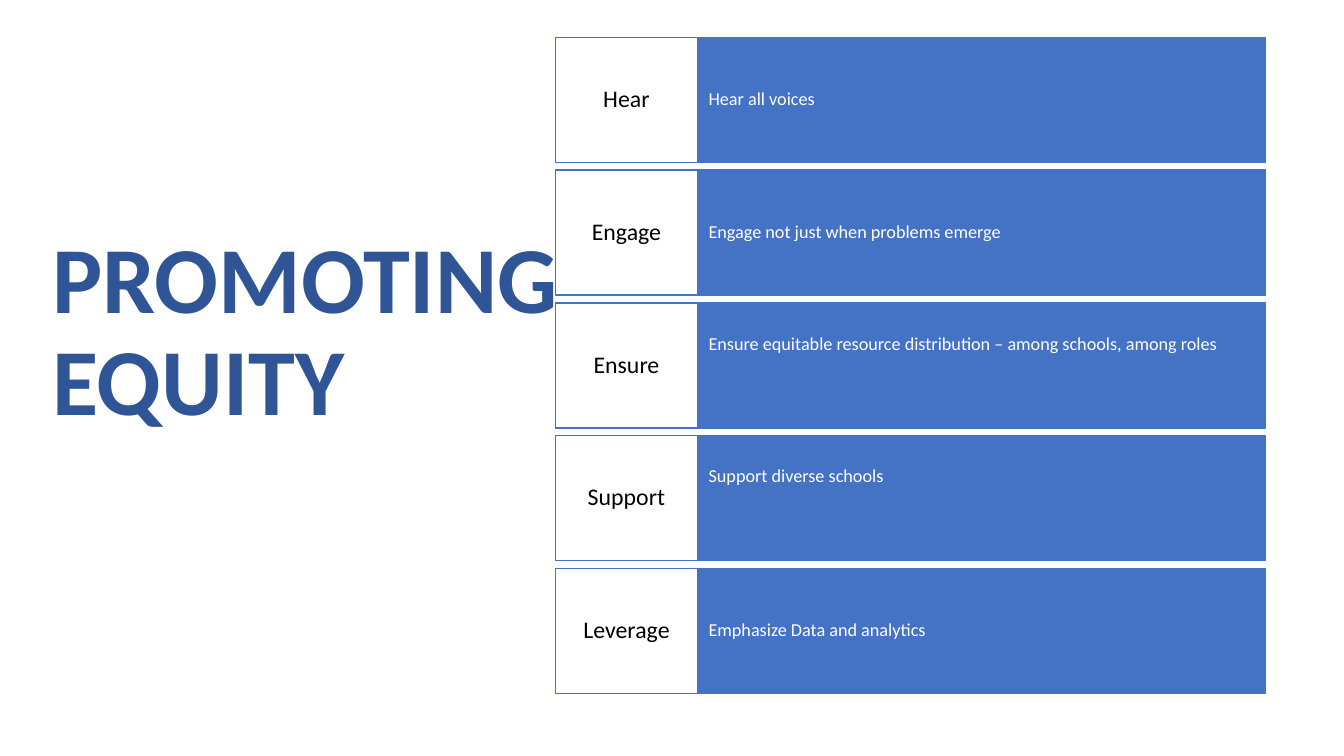
from pptx import Presentation
from pptx.dml.color import RGBColor
from pptx.enum.shapes import MSO_SHAPE
from pptx.enum.text import MSO_ANCHOR, MSO_AUTO_SIZE, PP_ALIGN
from pptx.util import Inches, Pt

# Content: label, text, lift of the text above the row's middle (inches)
TITLE = "PROMOTING EQUITY"
ROWS = [
    ("Hear", "Hear all voices", 0),
    ("Engage", "Engage not just when problems emerge", 0),
    ("Ensure", "Ensure equitable resource distribution – among schools, among roles", 0.21),
    ("Support", "Support diverse schools", 0.21),
    ("Leverage", "Emphasize Data and analytics", 0),
]

# Style
FONT = "Calibri"
NAVY = RGBColor(0x2F, 0x55, 0x97)
BLUE = RGBColor(0x44, 0x72, 0xC4)
WHITE = RGBColor(0xFF, 0xFF, 0xFF)
BLACK = RGBColor(0, 0, 0)
RECT = MSO_SHAPE.RECTANGLE
LEFT, CENTER = PP_ALIGN.LEFT, PP_ALIGN.CENTER
TOP, MIDDLE = MSO_ANCHOR.TOP, MSO_ANCHOR.MIDDLE

# Grid in inches: the label takes one fifth of the row
GRID_X, GRID_Y, GRID_W = 5.51, 0.37, 7.04
ROW_H, PITCH = 1.24, 1.3175
LABEL_W = GRID_W / 5


def write(frame, text, size, color, align, anchor, bold=False):
    frame.text = text
    frame.word_wrap = True
    frame.auto_size = MSO_AUTO_SIZE.NONE
    frame.vertical_anchor = anchor
    para = frame.paragraphs[0]
    para.alignment = align
    para.line_spacing = 0.9
    font = para.runs[0].font
    font.name, font.size, font.bold = FONT, Pt(size), bold
    font.color.rgb = color


def add_cell(slide, x, y, width, fill, text, size, color, align, side, lift=0):
    cell = slide.shapes.add_shape(
        RECT, Inches(x), Inches(y), Inches(width), Inches(ROW_H))
    cell.shadow.inherit = False
    cell.fill.solid()
    cell.fill.fore_color.rgb = fill
    cell.line.color.rgb = BLUE
    cell.line.width = Pt(1)
    frame = cell.text_frame
    write(frame, text, size, color, align, MIDDLE)
    frame.margin_left = frame.margin_right = Inches(side)
    frame.margin_top = Inches(0.1)
    frame.margin_bottom = Inches(0.1 + 2 * lift)


def main():
    deck = Presentation()
    deck.slide_width, deck.slide_height = Inches(13.33), Inches(7.5)
    slide = deck.slides.add_slide(deck.slide_layouts[5])

    # Title
    title = slide.shapes.title
    title.left, title.top = Inches(0.42), Inches(2.25)
    title.width, title.height = Inches(5.42), Inches(1.78)
    write(title.text_frame, TITLE, 67.5, NAVY, LEFT, TOP, bold=True)

    # Rows: blue text cell, then white label cell
    for i, (label, text, lift) in enumerate(ROWS):
        y = GRID_Y + i * PITCH
        add_cell(slide, GRID_X + LABEL_W, y, GRID_W - LABEL_W, BLUE,
                 text, 13, WHITE, LEFT, 0.11, lift)
        add_cell(slide, GRID_X, y, LABEL_W, WHITE,
                 label, 17, BLACK, CENTER, 0.07)

    deck.save("out.pptx")


if __name__ == "__main__":
    main()
